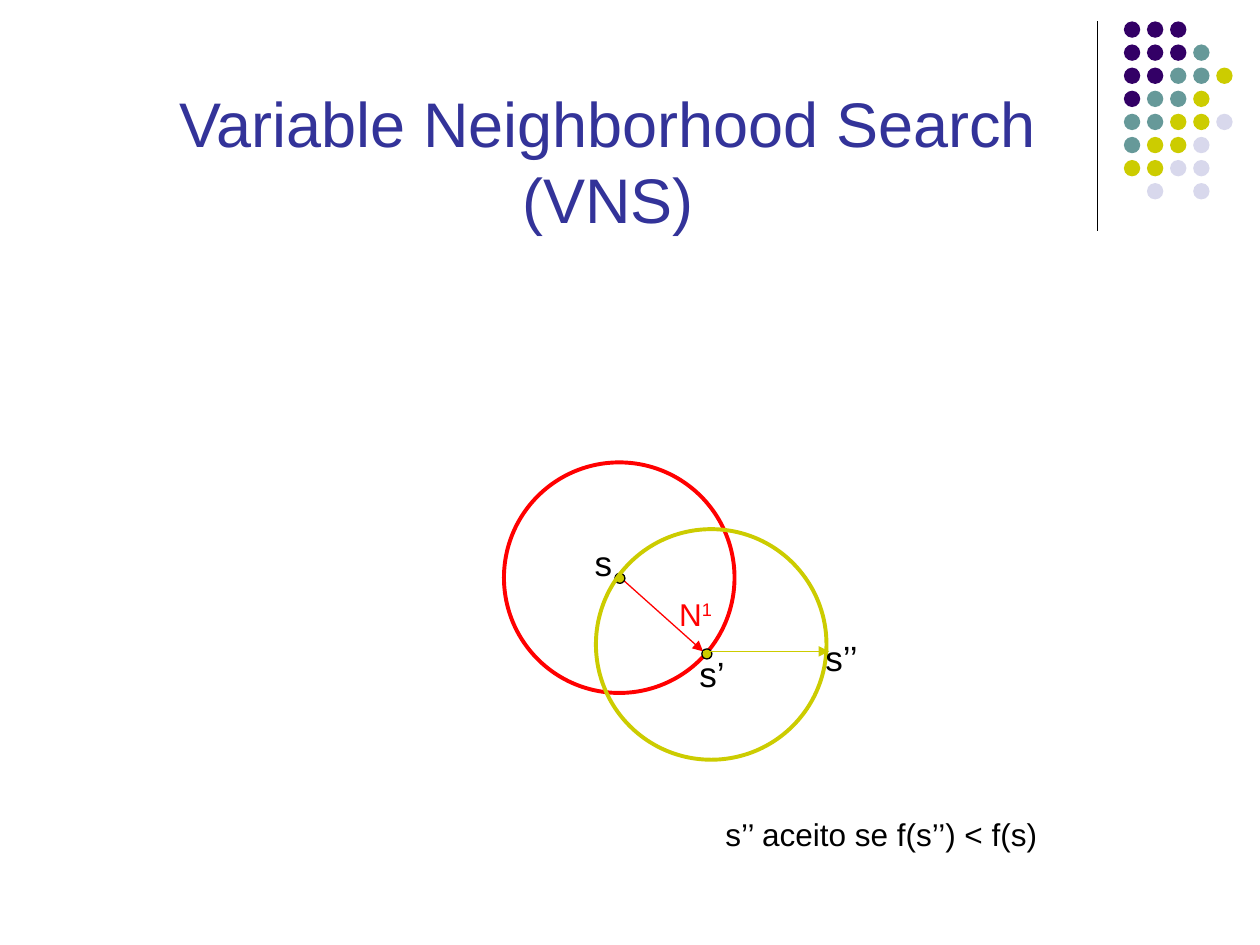
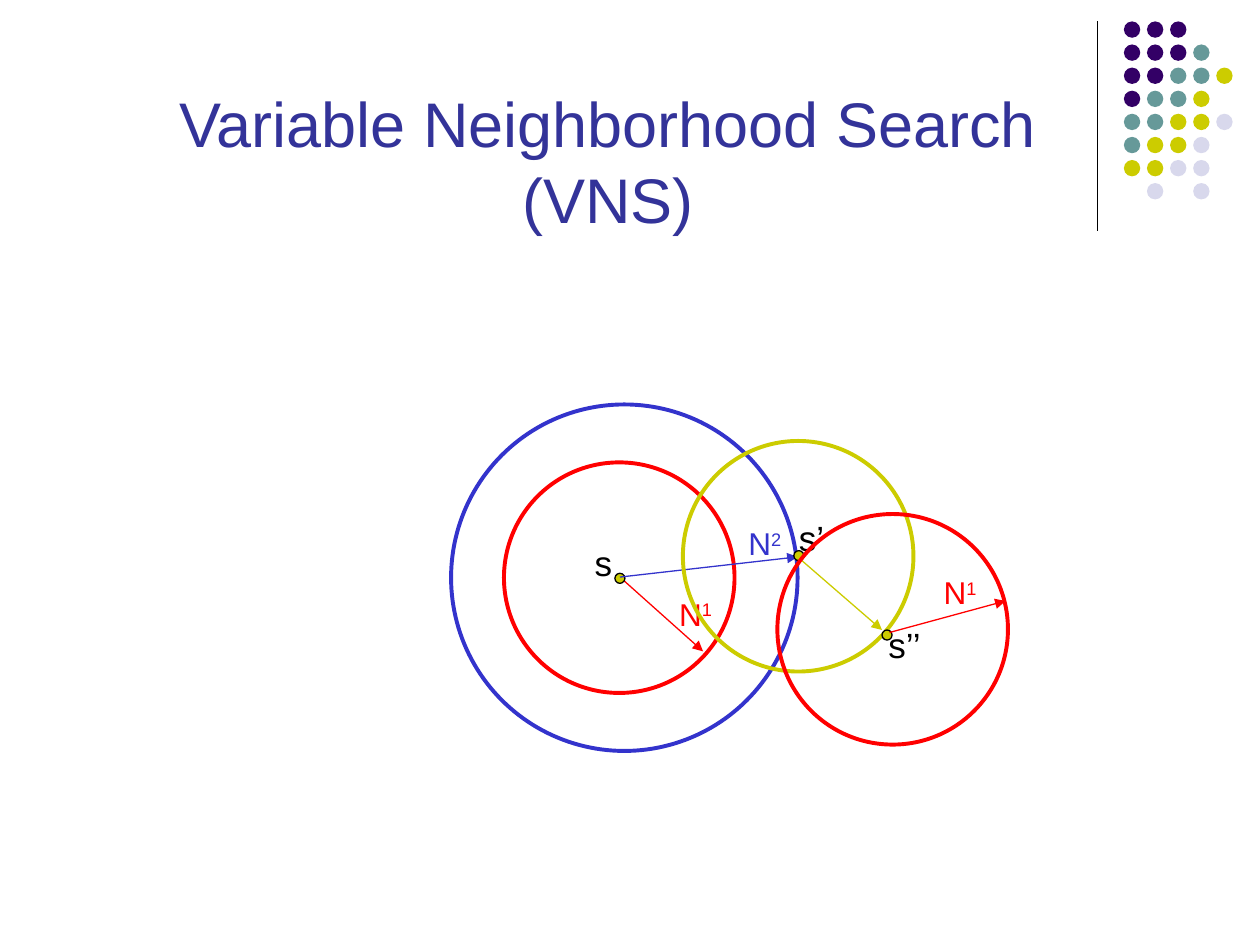
from dataclasses import dataclass

from lxml import etree
from pptx import Presentation
from pptx import util as u
from pptx.dml.color import RGBColor
from pptx.enum import shapes, text
from pptx.oxml import ns


@dataclass(frozen=True)
class Theme:
    font: str = "Arial"
    title: str = "333399"
    black: str = "000000"
    red: str = "FF0000"
    blue: str = "3333CC"
    purple: str = "330066"
    teal: str = "669999"
    olive: str = "CCCC00"
    lilac: str = "D8D8EC"
    title_size: int = 36
    state_size: int = 20
    label_size: int = 18
    thin: float = 0.75
    thick: float = 2.25


T = Theme()
RING, POINT, WIDE_RING = 1.83, 0.08, 2.75
TITLE = "Variable Neighborhood Search (VNS)"
DOT_ROWS = ["PPP", "PPPT", "PPTTO", "PTTO", "TTOOL", "TOOL", "OOLL", " L L"]
DOT_COLORS = {"P": T.purple, "T": T.teal, "O": T.olive, "L": T.lilac}
TEXT_STYLES = {
    "title": dict(size=T.title_size, align="CENTER", before=0, anchor="BOTTOM", box=(7.13, 1.31)),
    "state": dict(size=T.state_size, align="LEFT", before=12, anchor="TOP", box=(0.58, 0.43)),
    "hood": dict(size=T.label_size, align="CENTER", before=10, anchor="TOP", box=(0.58, 0.41)),
    "note": dict(size=T.label_size, align="CENTER", before=10, anchor="TOP", box=(4.33, 0.41)),
}


def add_oval(s, x, y, size, fill=None, line=None, width=T.thin):
    sp = s.shapes.add_shape(shapes.MSO_SHAPE.OVAL, *map(u.Inches, (x, y, size, size)))
    sp.shadow.inherit = False
    if fill:
        sp.fill.solid()
        sp.fill.fore_color.rgb = RGBColor.from_string(fill)
    else:
        sp.fill.background()
    if line:
        sp.line.color.rgb = RGBColor.from_string(line)
        sp.line.width = u.Pt(width)
    else:
        sp.line.fill.background()


def add_line(s, x1, y1, x2, y2, color, arrow=True):
    cx = s.shapes.add_connector(shapes.MSO_CONNECTOR.STRAIGHT, *map(u.Inches, (x1, y1, x2, y2)))
    cx.line.color.rgb = RGBColor.from_string(color)
    cx.line.width = u.Pt(T.thin)
    if arrow:
        etree.SubElement(cx.line._get_or_add_ln(), ns.qn("a:tailEnd"), type="triangle")
    etree.SubElement(cx._element.spPr, ns.qn("a:effectLst"))


first_ring = ("ring", 4, 3.67, RING, T.red)
first_move = ("arrow", 4.92, 4.58, 5.58, 5.17, T.red)
first_hood = ("hood", 5.23, 4.67, "N", T.red, "1")
start_point = ("point", 4.88, 4.55)
start_name = ("state", 4.67, 4.25, "s", T.black)
title = ("title", 1.26, 0.61, TITLE, T.title)

slides = [
    [
        first_ring, first_move, first_hood, start_point,
        ("point", 5.57, 5.15),
        ("ring", 4.73, 4.2, RING, T.olive),
        ("arrow", 5.58, 5.17, 6.58, 5.17, T.olive),
        start_name,
        ("state", 5.5, 5.13, "s’", T.black),
        ("state", 6.5, 5, "s’’", T.black),
        ("note", 4.83, 6.42, "s’’ aceito se f(s’’) < f(s)", T.black),
        title,
    ],
    [
        first_ring, first_move, first_hood, start_point,
        ("ring", 3.58, 3.21, WIDE_RING, T.blue),
        ("arrow", 4.92, 4.58, 6.33, 4.42, T.blue),
        ("hood", 5.78, 4.11, "N", T.blue, "2"),
        ("ring", 5.42, 3.5, RING, T.olive),
        ("point", 6.3, 4.37),
        ("arrow", 6.33, 4.42, 7, 5, T.olive),
        start_name,
        ("state", 6.29, 4.05, "s’", T.black),
        ("state", 7, 4.9, "s’’", T.black),
        ("ring", 6.17, 4.08, RING, T.red),
        ("point", 7, 5),
        ("arrow", 7.06, 5.02, 7.98, 4.77, T.red),
        ("hood", 7.33, 4.5, "N", T.red, "1"),
        title,
    ],
]

prs = Presentation()
prs.slide_width, prs.slide_height = u.Inches(10), u.Inches(7.5)

for items in slides:
    s = prs.slides.add_slide(prs.slide_layouts[6])
    add_line(s, 8.71, 0.17, 8.71, 1.83, T.black, arrow=False)
    for row, codes in enumerate(DOT_ROWS):
        for col, code in enumerate(codes):
            if code in DOT_COLORS:
                add_oval(s, 8.92 + col * 1.1 / 6, 0.17 + row * 1.1 / 6, 0.13, DOT_COLORS[code])

    for kind, x, y, *rest in items:
        if kind == "ring":
            size, color = rest
            add_oval(s, x, y, size, line=color, width=T.thick)
        elif kind == "point":
            add_oval(s, x, y, POINT, T.olive, T.black)
        elif kind == "arrow":
            add_line(s, x, y, *rest)
        else:
            words, color, *superscript = rest
            style = TEXT_STYLES[kind]
            tf = s.shapes.add_textbox(*map(u.Inches, (x, y, *style["box"]))).text_frame
            frame = dict.fromkeys(("margin_left", "margin_top", "margin_right", "margin_bottom"), u.Inches(0.05))
            frame.update(
                word_wrap=True,
                auto_size=text.MSO_AUTO_SIZE.SHAPE_TO_FIT_TEXT,
                vertical_anchor=text.MSO_ANCHOR[style["anchor"]],
            )
            for name, value in frame.items():
                setattr(tf, name, value)
            p = tf.paragraphs[0]
            p.alignment = text.PP_ALIGN[style["align"]]
            p.space_before = u.Pt(style["before"])
            for i, part in enumerate([words, *superscript]):
                r = p.add_run()
                r.text = part
                for name, value in dict(name=T.font, size=u.Pt(style["size"])).items():
                    setattr(r.font, name, value)
                r.font.color.rgb = RGBColor.from_string(color)
                if i:
                    r._r.get_or_add_rPr().set("baseline", "30000")

prs.save("out.pptx")
